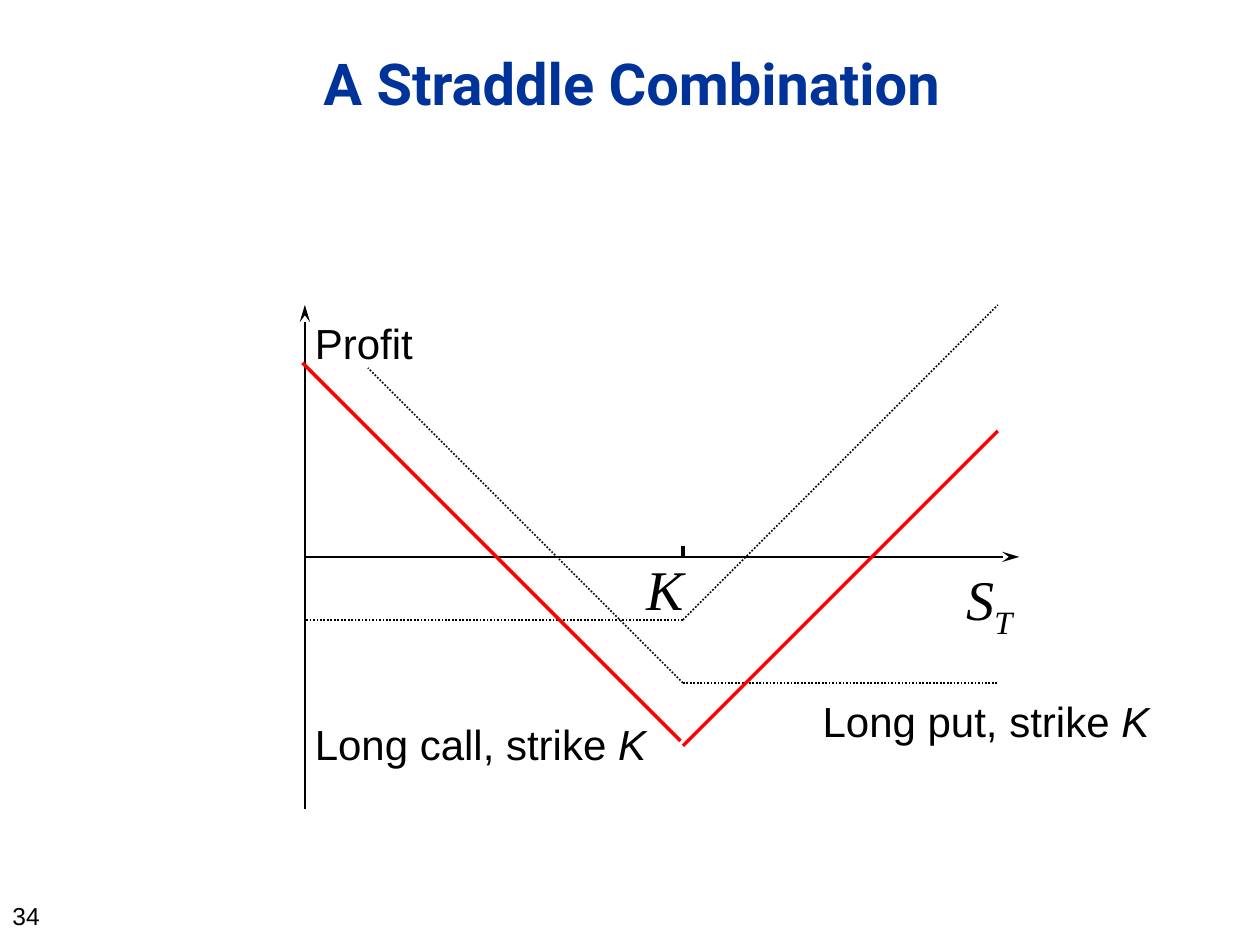
from dataclasses import dataclass

import pptx
import pptx.dml.color
import pptx.enum.dml
import pptx.enum.shapes
import pptx.enum.text
import pptx.oxml.ns
import pptx.util
from lxml import etree
from pptx.util import Inches

BLACK = pptx.dml.color.RGBColor(0x00, 0x00, 0x00)
RED = pptx.dml.color.RGBColor(0xFF, 0x00, 0x00)
NAVY = pptx.dml.color.RGBColor(0x00, 0x33, 0x99)

ORIGIN_X, AXIS_Y = 2.42, 4.42
STRIKE_X, RIGHT_X = 5.42, 7.92
CALL_COST_Y, PUT_COST_Y, STRADDLE_COST_Y = (AXIS_Y + cost for cost in (0.5, 1, 1.5))
RISE = RIGHT_X - STRIKE_X


@dataclass(frozen=True)
class Segment:
    start: tuple[float, float]
    end: tuple[float, float]
    color: pptx.dml.color.RGBColor = BLACK
    weight: float = 1
    dotted: bool = False
    arrow: bool = False


@dataclass(frozen=True)
class Run:
    text: str
    italic: bool = False
    subscript: bool = False


@dataclass(frozen=True)
class Label:
    box: tuple[float, float, float, float]
    runs: tuple[Run, ...]
    size: float = 24
    font: str = "Arial"
    wrap: bool = False


AXES = (
    Segment((ORIGIN_X, AXIS_Y + 2), (ORIGIN_X, AXIS_Y - 2), arrow=True),
    Segment((ORIGIN_X, AXIS_Y), (8.09, AXIS_Y), arrow=True),
    Segment((STRIKE_X, AXIS_Y), (STRIKE_X, 4.33), weight=2),
)
PAYOFFS = (
    Segment((STRIKE_X, CALL_COST_Y), (ORIGIN_X, CALL_COST_Y), dotted=True),
    Segment((STRIKE_X, CALL_COST_Y), (RIGHT_X, CALL_COST_Y - RISE), dotted=True),
    Segment((STRIKE_X, PUT_COST_Y), (RIGHT_X, PUT_COST_Y), dotted=True),
    Segment((STRIKE_X, PUT_COST_Y), (STRIKE_X - RISE, PUT_COST_Y - RISE), dotted=True),
    Segment((STRIKE_X, STRADDLE_COST_Y), (RIGHT_X, STRADDLE_COST_Y - RISE), RED, 2),
    Segment((5.4, 5.88), (2.4, 2.88), RED, 2),
)
STRIKE = Run("K", italic=True)
AXIS_LABELS = (
    Label((2.4, 2.47, 0.99, 0.51), (Run("Profit"),)),
    Label((7.57, 4.43, 0.59, 0.63),
          (Run("S", italic=True), Run("T", italic=True, subscript=True)),
          32, "Times New Roman"),
    Label((5.03, 4.35, 0.5, 0.63), (STRIKE,), 32, "Times New Roman"),
)
CAPTIONS = (
    Label((0, 7.1, 2.25, 0.4), (Run("34"),), 14, wrap=True),
    Label((2.4, 5.65, 2.86, 0.51), (Run("Long call, strike "), STRIKE)),
    Label((6.43, 5.47, 2.82, 0.51), (Run("Long put, strike "), STRIKE)),
)


def draw_segment(slide: pptx.slide.Slide, segment: Segment) -> None:
    connector = slide.shapes.add_connector(
        pptx.enum.shapes.MSO_CONNECTOR.STRAIGHT,
        *map(Inches, segment.start + segment.end))
    line = connector.line
    line.color.rgb = segment.color
    line.width = pptx.util.Pt(segment.weight)
    if segment.dotted:
        line.dash_style = pptx.enum.dml.MSO_LINE.ROUND_DOT
    qn = pptx.oxml.ns.qn
    properties = connector._element.spPr
    if segment.arrow:
        etree.SubElement(properties.find(qn("a:ln")), qn("a:tailEnd"),
                         type="stealth", w="med", len="lg")
    etree.SubElement(properties, qn("a:effectLst"))


def draw_label(slide: pptx.slide.Slide, label: Label) -> None:
    frame = slide.shapes.add_textbox(*map(Inches, label.box)).text_frame
    frame.word_wrap = label.wrap
    if not label.wrap:
        frame.auto_size = pptx.enum.text.MSO_AUTO_SIZE.SHAPE_TO_FIT_TEXT
    paragraph = frame.paragraphs[0]
    paragraph.font.name = label.font
    paragraph.font.size = pptx.util.Pt(label.size)
    paragraph.font.color.rgb = BLACK
    for part in label.runs:
        run = paragraph.add_run()
        run.text = part.text
        if part.italic:
            run.font.italic = True
        if part.subscript:
            run.font._element.set("baseline", "-25000")


def draw_title(slide: pptx.slide.Slide) -> None:
    frame = slide.shapes.add_textbox(
        Inches(0.5), Inches(0.26), Inches(9.03), Inches(1.31)).text_frame
    frame.word_wrap = True
    frame.vertical_anchor = pptx.enum.text.MSO_ANCHOR.MIDDLE
    heading = frame.paragraphs[0]
    heading.alignment = pptx.enum.text.PP_ALIGN.CENTER
    heading.line_spacing = 1.05
    heading.font.name = "Roboto"
    heading.font.size = pptx.util.Pt(33)
    heading.font.bold = True
    heading.font.color.rgb = NAVY
    heading.add_run().text = "A Straddle Combination"
    heading.add_line_break()


def main() -> None:
    deck = pptx.Presentation()
    deck.slide_width, deck.slide_height = Inches(10), Inches(7.5)
    slide = deck.slides.add_slide(deck.slide_layouts[6])
    draw_title(slide)
    for segment in AXES:
        draw_segment(slide, segment)
    for label in AXIS_LABELS:
        draw_label(slide, label)
    for segment in PAYOFFS:
        draw_segment(slide, segment)
    for label in CAPTIONS:
        draw_label(slide, label)
    deck.save("out.pptx")


if __name__ == "__main__":
    main()
